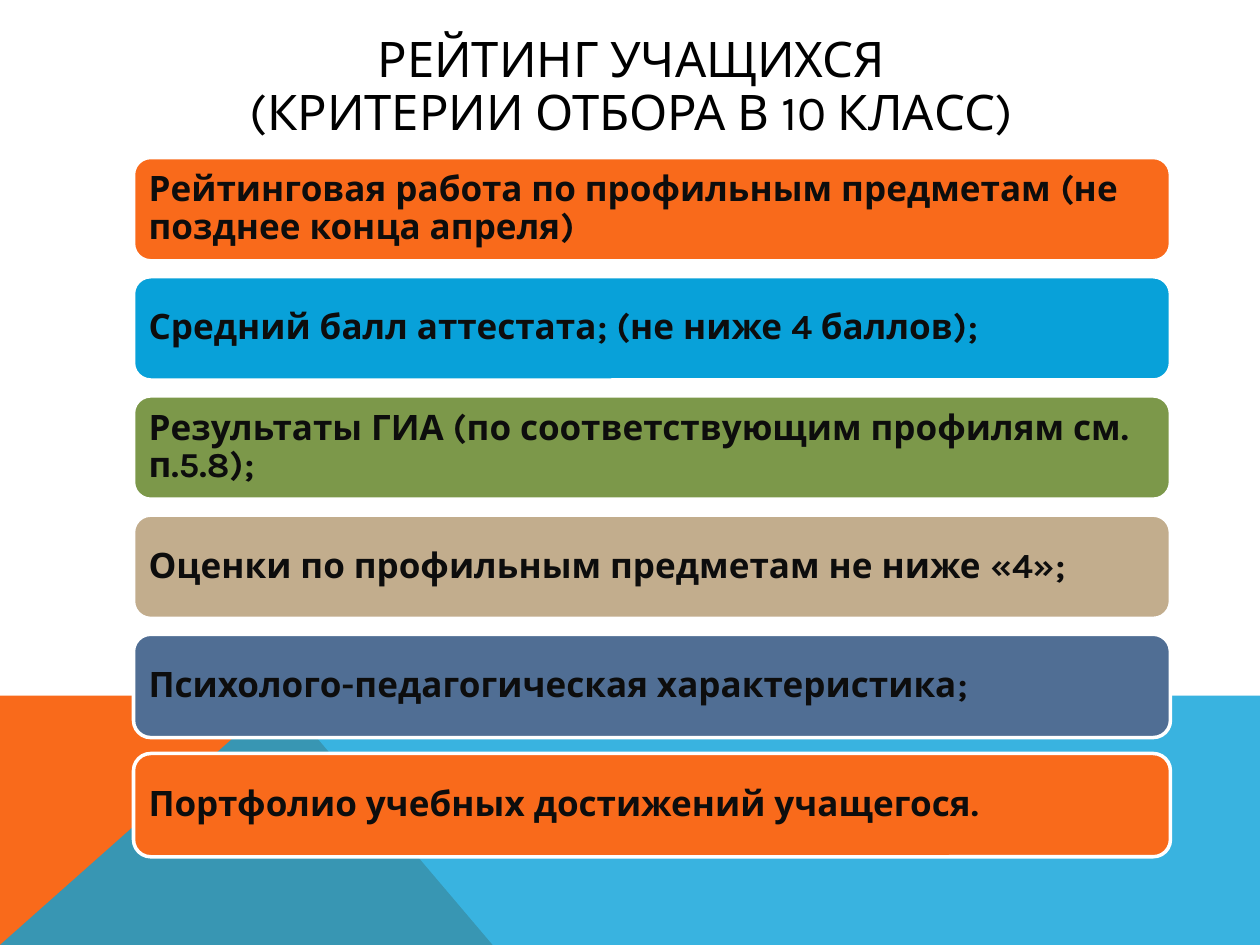
import pptx
import pptx.util
import pptx.dml.color
import pptx.enum.shapes
import pptx.enum.text
import lxml.etree
from pptx.util import Inches

COLORS = {
    "orange": "F96A1B",
    "blue": "08A1D9",
    "green": "7C984A",
    "sand": "C2AD8D",
    "slate": "506E94",
    "white": "FFFFFF",
    "ink": "0D0D0D",
    "black": "000000",
}

TITLE_LINES = ["РЕЙТИНГ УЧАЩИХСЯ", "(КРИТЕРИИ ОТБОРА В 10 КЛАСС)"]

CRITERIA = [
    ("Рейтинговая работа по профильным предметам (не позднее конца апреля)", "orange"),
    ("Средний балл аттестата; (не ниже 4 баллов);", "blue"),
    ("Результаты ГИА (по соответствующим профилям см. п.5.8);", "green"),
    ("Оценки по профильным предметам не ниже «4»;", "sand"),
    ("Психолого-педагогическая характеристика;", "slate"),
    ("Портфолио учебных достижений учащегося.", "orange"),
]

BAR_TOP, BAR_HEIGHT, BAR_PITCH = 1.25, 0.82, 0.946


class SlideBuilder:
    """Holds the style and the current slide."""

    font_name = "Karla"
    title_size = 28
    bar_size = 20

    def __init__(self, page):
        self.page = page

    def color(self, name):
        return pptx.dml.color.RGBColor.from_string(COLORS[name])

    def fill(self, shape, name):
        shape.shadow.inherit = False
        shape.fill.solid()
        shape.fill.fore_color.rgb = self.color(name)

    def place(self, shape, left, top, width, height):
        shape.left, shape.top = Inches(left), Inches(top)
        shape.width, shape.height = Inches(width), Inches(height)

    def span(self, para, text, size, name, bold=False):
        span = para.add_run()
        span.text = text
        span.font.name = self.font_name
        span.font.size = pptx.util.Pt(size)
        span.font.bold = bold
        span.font.color.rgb = self.color(name)

    def polygon(self, points, name, opacity=100):
        corners = [(Inches(x), Inches(y)) for x, y in points]
        builder = self.page.shapes.build_freeform(*corners[0])
        builder.add_line_segments(corners[1:], close=True)
        shape = builder.convert_to_shape()
        self.fill(shape, name)
        shape.line.fill.background()
        if opacity < 100:
            tag = pptx.oxml.ns.qn("a:srgbClr")
            tint = next(shape.fill._xPr.iter(tag))
            alpha = lxml.etree.SubElement(tint, pptx.oxml.ns.qn("a:alpha"))
            alpha.set("val", str(opacity * 1000))

    def title(self, lines):
        box = self.page.shapes.title
        self.place(box, 0.9, 0.4, 8.22, 0.6)
        frame = box.text_frame
        frame.auto_size = pptx.enum.text.MSO_AUTO_SIZE.NONE
        frame.vertical_anchor = pptx.enum.text.MSO_ANCHOR.MIDDLE
        para = frame.paragraphs[0]
        para.alignment = pptx.enum.text.PP_ALIGN.CENTER
        para.line_spacing = 0.9
        for index, line in enumerate(lines):
            if index:
                para.add_line_break()
            self.span(para, line, self.title_size, "black")

    def bar(self, top, text, name):
        shape = self.page.shapes.add_shape(
            pptx.enum.shapes.MSO_SHAPE.ROUNDED_RECTANGLE,
            Inches(1.06), Inches(top), Inches(8.23), Inches(BAR_HEIGHT))
        self.fill(shape, name)
        shape.line.color.rgb = self.color("white")
        shape.line.width = pptx.util.Pt(2)
        frame = shape.text_frame
        frame.word_wrap = True
        frame.vertical_anchor = pptx.enum.text.MSO_ANCHOR.MIDDLE
        frame.margin_left = frame.margin_right = Inches(0.08)
        frame.margin_top = frame.margin_bottom = Inches(0.08)
        para = frame.paragraphs[0]
        para.alignment = pptx.enum.text.PP_ALIGN.LEFT
        para.line_spacing = 0.9
        self.span(para, text, self.bar_size, name="ink", bold=True)


def main():
    deck = pptx.Presentation()
    deck.slide_width, deck.slide_height = Inches(10), Inches(7.5)
    page = deck.slides.add_slide(deck.slide_layouts[5])
    slide = SlideBuilder(page)
    slide.polygon([(0, 7.5), (0, 5.52), (2.23, 5.52), (3.91, 7.5)], "orange")
    slide.polygon([(0, 7.5), (2.23, 5.52), (10, 5.52), (10, 7.5)], "blue", opacity=80)
    for index, (text, name) in enumerate(CRITERIA):
        slide.bar(BAR_TOP + index * BAR_PITCH, text, name)
    slide.title(TITLE_LINES)
    deck.save("out.pptx")


if __name__ == "__main__":
    main()
